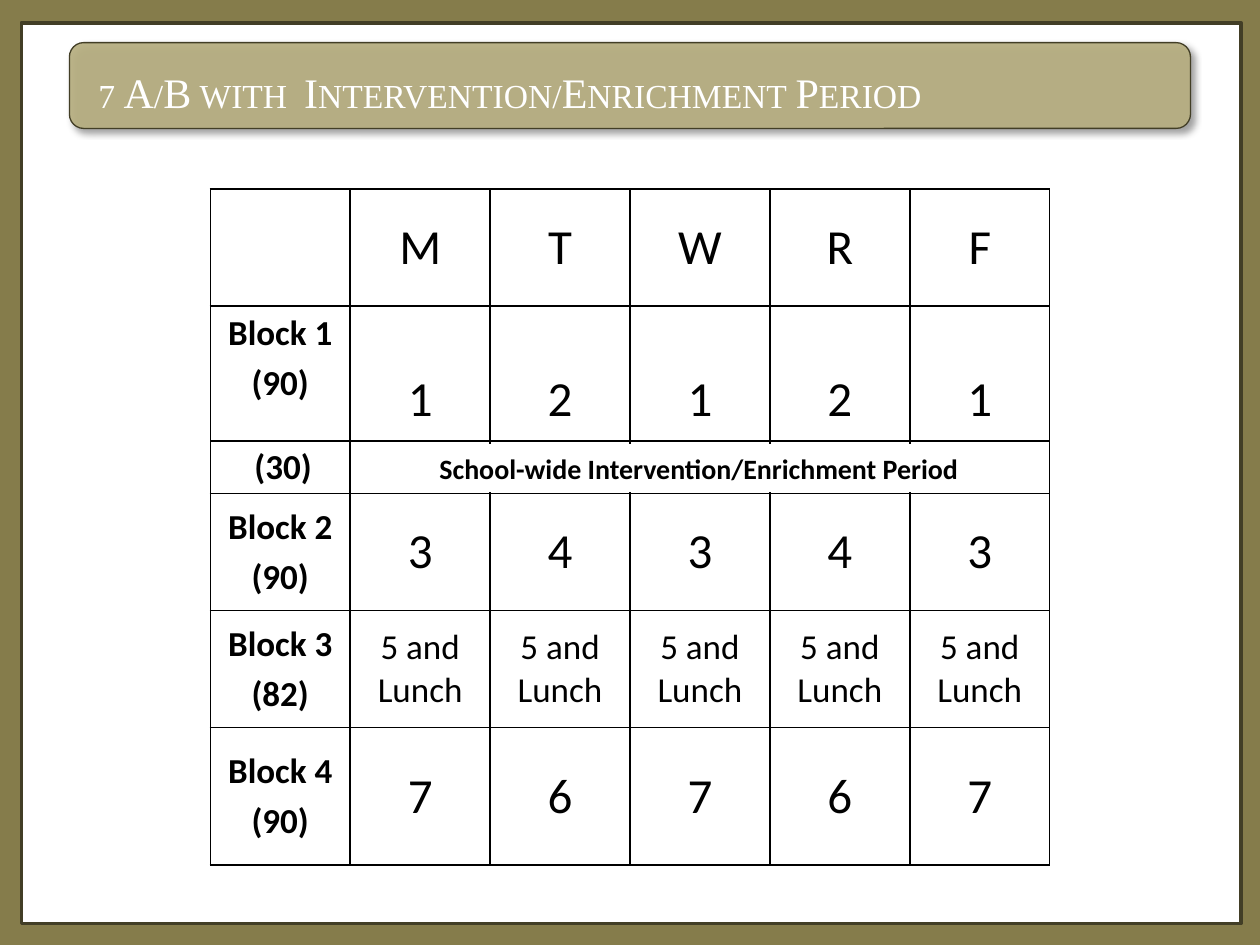
from lxml.etree import SubElement as Sub
from pptx import Presentation
from pptx.dml.color import RGBColor as RGB
from pptx.enum.shapes import MSO_CONNECTOR as Link, MSO_SHAPE as Kind
from pptx.enum.text import MSO_ANCHOR as Anchor, PP_ALIGN as Align
from pptx.oxml import parse_xml
from pptx.oxml.ns import nsdecls, qn
from pptx.util import Cm, Pt

HUE = {"olive": "857C4B", "tan": "B7AF81", "edge": "423E26",
       "white": "FFFFFF", "black": "000000"}
TITLE = "7 A/B with  Intervention/Enrichment Period"
DAYS = ["M", "T", "W", "R", "F"]
LUNCH = "5 and Lunch"
# label, minutes, entries for the five days, row height in cm
BLOCKS = [
    ("Block 1", "(90)", ["1", "2", "1", "2", "1"], 3.78),
    ("Block 2", "(90)", ["3", "4", "3", "4", "3"], 2.36),
    ("Block 3", "(82)", [LUNCH] * 5, 2.36),
    ("Block 4", "(90)", ["7", "6", "7", "6", "7"], 2.77),
]
HEAD, COL = 2.36, 2.82
LEFT, TOP = 4.24, 3.81
BREAK = 8.89  # top of the 30-minute period


def paint(font, size, hue="black", bold=False, name="Calibri"):
    font.size, font.bold, font.name = Pt(size), bold, name
    font.color.rgb = RGB.from_string(HUE[hue])


def write(frame, lines, size, bold=False, align=Align.CENTER):
    frame.text = "\n".join(lines)
    for i, para in enumerate(frame.paragraphs):
        para.alignment = align
        para.space_before = Pt(4 if i else 0)
        paint(para.font, size, bold=bold)


def panel(kind, box, fill, line, width):
    shape = slide.shapes.add_shape(kind, *map(Cm, box))
    shape.shadow.inherit = False
    shape.fill.solid()
    shape.fill.fore_color.rgb = RGB.from_string(HUE[fill])
    shape.line.color.rgb = RGB.from_string(HUE[line])
    shape.line.width = Pt(width)
    return shape


def rule(cell):
    """Draw a thin black border on all four sides of a cell."""
    props = cell._tc.get_or_add_tcPr()
    for i, side in enumerate("LRTB"):
        props.insert(i, parse_xml(
            f'<a:ln{side} {nsdecls("a")} w="12700"><a:solidFill>'
            f'<a:srgbClr val="{HUE["black"]}"/></a:solidFill></a:ln{side}>'))


def fill_cell(cell, lines, size, bold=False, anchor=Anchor.MIDDLE):
    cell.fill.background()
    rule(cell)
    cell.vertical_anchor = anchor
    write(cell.text_frame, lines, size, bold)


deck = Presentation()
deck.slide_width, deck.slide_height = Cm(25.4), Cm(19.05)
slide = deck.slides.add_slide(deck.slide_layouts[5])
slide.background.fill.solid()
slide.background.fill.fore_color.rgb = RGB.from_string(HUE["olive"])

# Page and title band
panel(Kind.RECTANGLE, (0.43, 0.46, 24.59, 18.16), "white", "edge", 2)
band = panel(Kind.ROUNDED_RECTANGLE, (1.4, 0.86, 22.6, 1.73), "tan", "edge", 0.75)
tint = band._element.spPr.find(qn("a:solidFill"))[0]
Sub(tint, qn("a:alpha"), val="93000")
glow = band._element.spPr.find(qn("a:effectLst"))
glow.append(parse_xml(
    f'<a:outerShdw {nsdecls("a")} blurRad="50800" dist="38100" dir="2700000">'
    f'<a:srgbClr val="{HUE["black"]}"><a:alpha val="40000"/></a:srgbClr>'
    '</a:outerShdw>'))

title = slide.shapes.title
slide.shapes._spTree.append(title._element)
title.left, title.top, title.width, title.height = map(Cm, (1.73, 1.19, 22.5, 1.3))
title.text_frame.text = TITLE
title.text_frame.vertical_anchor = Anchor.BOTTOM
para = title.text_frame.paragraphs[0]
para.alignment = Align.LEFT
paint(para.font, 24, "white", name="Times New Roman")
para.font._element.set("cap", "small")

# Timetable
highs = [HEAD] + [block[3] for block in BLOCKS]
cols = len(DAYS) + 1
grid = slide.shapes.add_table(len(highs), cols, Cm(LEFT), Cm(TOP),
                              Cm(COL * cols), Cm(sum(highs))).table
grid.first_row = grid.horz_banding = False
for row, high in zip(grid.rows, highs):
    row.height = Cm(high)
for col in grid.columns:
    col.width = Cm(COL)

fill_cell(grid.cell(0, 0), [], 28)
for c, day in enumerate(DAYS, 1):
    fill_cell(grid.cell(0, c), [day], 28)
for r, (name, mins, marks, _) in enumerate(BLOCKS, 1):
    fill_cell(grid.cell(r, 0), [name, mins], 20, True,
              Anchor.TOP if r == 1 else Anchor.MIDDLE)
    for c, mark in enumerate(marks, 1):
        fill_cell(grid.cell(r, c), [mark], 20 if mark == LUNCH else 28)

# Period between blocks 1 and 2
line = slide.shapes.add_connector(Link.STRAIGHT, Cm(LEFT), Cm(BREAK),
                                  Cm(LEFT + COL * cols), Cm(BREAK))
line.line.color.rgb = RGB.from_string(HUE["black"])
line.line.width = Pt(1)
Sub(line._element.spPr, qn("a:effectLst"))

mins = slide.shapes.add_textbox(Cm(4.88), Cm(8.84), Cm(1.68), Cm(1.11))
strip = panel(Kind.RECTANGLE, (8.61, 8.97, 11.13, 0.94), "white", "white", 1)
for shape, text, size in [
        (mins, "(30)", 20),
        (strip, "School-wide Intervention/Enrichment Period", 16)]:
    shape.text_frame.word_wrap = False
    shape.text_frame.vertical_anchor = Anchor.TOP
    write(shape.text_frame, [text], size, True, Align.LEFT)

deck.save("out.pptx")
